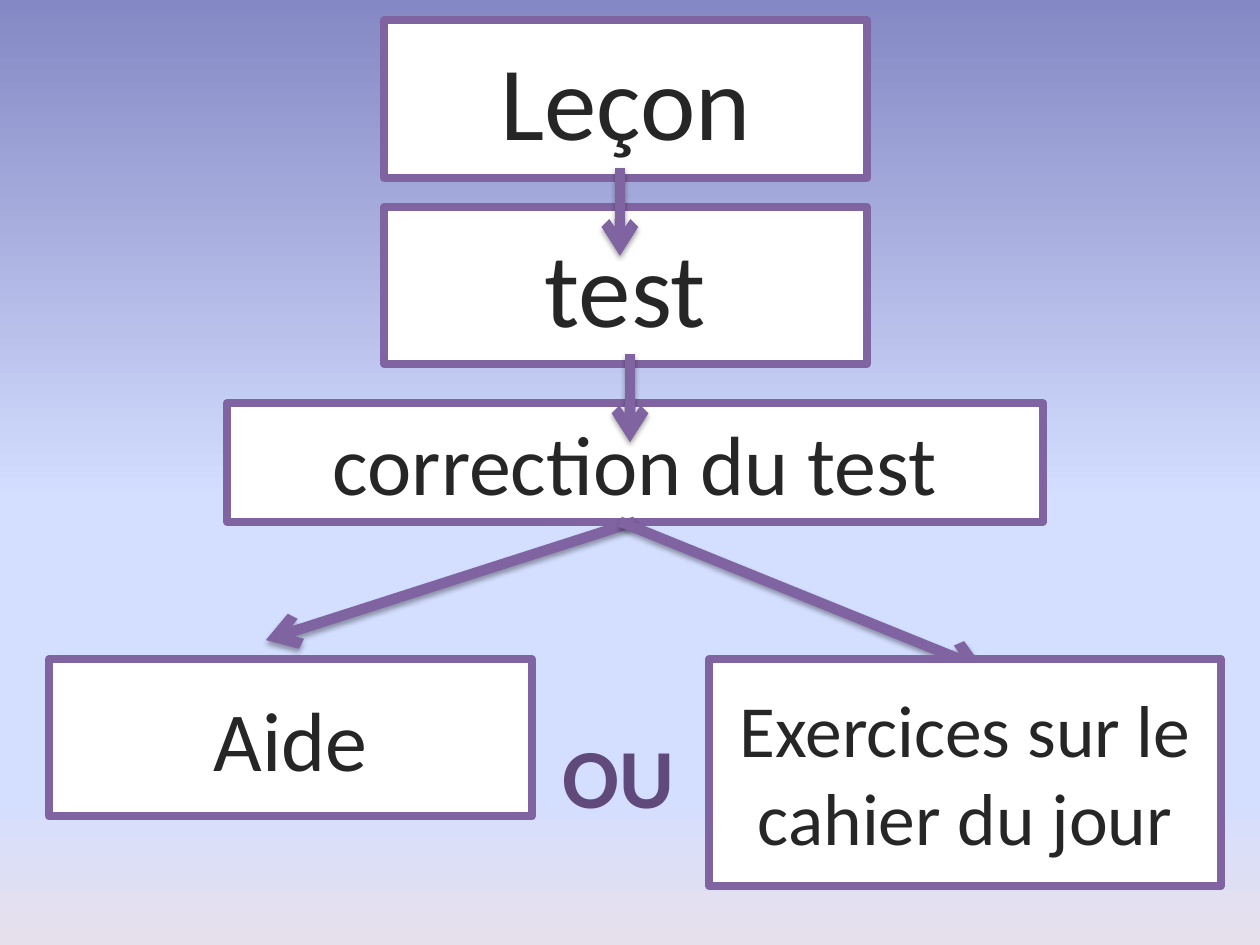
from dataclasses import dataclass

from lxml import etree
from pptx import Presentation
from pptx.dml.color import RGBColor
from pptx.enum.shapes import MSO_CONNECTOR as CONN, MSO_SHAPE as SHAPE
from pptx.enum.text import MSO_ANCHOR as ANCHOR, MSO_AUTO_SIZE as AUTO, PP_ALIGN as ALIGN
from pptx.oxml.ns import qn
from pptx.util import Inches, Pt


@dataclass(frozen=True)
class Theme:
    font: str = "Calibri"
    ink: str = "262626"
    accent: str = "8064A2"
    accent_dark: str = "604A7B"
    paper: str = "FFFFFF"
    shadow: str = "000000"
    sky: tuple = ((0, "8488C4"), (53, "D4DEFF"), (83, "D4DEFF"), (100, "E6E0EC"))
    title: int = 60
    body: int = 48
    small: int = 42
    border: float = 4.5
    arrow: float = 6


T = Theme()
BOTTOM = 2


def rgb(value):
    return RGBColor.from_string(value)


def add_color(parent, value):
    return etree.SubElement(parent, qn("a:srgbClr"), val=value)


def paint_background(s):
    fill = s.background.fill
    fill.gradient()
    fill.gradient_angle = 270
    stops = s.element.find(".//" + qn("a:gsLst"))
    for stop in list(stops):
        stops.remove(stop)
    for pos, color in T.sky:
        add_color(etree.SubElement(stops, qn("a:gs"), pos=str(pos * 1000)), color)


def write(tf, text, align, **font):
    p = tf.paragraphs[0]
    p.alignment = align
    r = p.add_run()
    r.text = text
    color = font.pop("color", T.ink)
    for name, value in {"name": T.font, **font}.items():
        setattr(r.font, name, value)
    r.font.color.rgb = rgb(color)


def add_box(s, x, y, w, h, text, size):
    sp = s.shapes.add_shape(SHAPE.RECTANGLE, *map(Inches, (x, y, w, h)))
    sp.shadow.inherit = False
    sp.fill.solid()
    sp.fill.fore_color.rgb = rgb(T.paper)
    sp.line.color.rgb = rgb(T.accent)
    sp.line.width = Pt(T.border)
    tf = sp.text_frame
    tf.word_wrap = True
    tf.vertical_anchor = ANCHOR.MIDDLE
    write(tf, text, ALIGN.CENTER, size=Pt(size))
    return sp


def add_arrow(s, x1, y1, x2, y2):
    """Arrow with an open head and a soft shadow straight below it."""
    cx = s.shapes.add_connector(CONN.STRAIGHT, *map(Inches, (x1, y1, x2, y2)))
    cx.line.color.rgb = rgb(T.accent)
    cx.line.width = Pt(T.arrow)
    etree.SubElement(cx.line._get_or_add_ln(), qn("a:tailEnd"), type="arrow")
    effects = etree.SubElement(cx._element.spPr, qn("a:effectLst"))
    shadow = etree.SubElement(effects, qn("a:outerShdw"), blurRad=str(Pt(3.1)),
                              dist=str(Pt(1.8)), dir="5400000", rotWithShape="0")
    etree.SubElement(add_color(shadow, T.shadow), qn("a:alpha"), val="35000")
    return cx


def add_steps(s, x, y, w, h):
    """Stack the three steps, with short arrows across the gaps; return the last box."""
    step_w, step_h, pitch = 3.83, 1.25, 1.48
    for i, text in enumerate(("Leçon", "test")):
        add_box(s, x + 1.25, y + i * pitch, step_w, step_h, text, T.title)
    last_h = 0.94
    last = add_box(s, x, y + h - last_h, w, last_h, "correction du test", T.body)
    for i, dx in enumerate((3.12, 3.2)):
        top = y + 1.17 + i * pitch
        add_arrow(s, x + dx, top, x + dx, top + 0.7)
    return last


def add_choice(s, x, y, w, h, source):
    """Fork from the source box to the two alternatives."""
    left_w, right_w, box_y = 3.83, 4.06, y + 1.09
    left = add_arrow(s, x + 4.61, y, x + 1.72, y + 0.94)
    left.begin_connect(source, BOTTOM)
    add_arrow(s, x + 4.53, y, x + 7.42, y + 1.17)
    add_box(s, x, box_y, left_w, 1.25, "Aide", T.body)

    label = s.shapes.add_textbox(*map(Inches, (x + 3.98, y + 1.56, 1.17, 0.91)))
    tf = label.text_frame
    tf.word_wrap = True
    tf.auto_size = AUTO.SHAPE_TO_FIT_TEXT
    write(tf, "OU", ALIGN.LEFT, size=Pt(T.body), bold=True, color=T.accent_dark)

    add_box(s, x + w - right_w, box_y, right_w, y + h - box_y,
            "Exercices sur le cahier du jour", T.small)


def main():
    prs = Presentation()
    prs.slide_width, prs.slide_height = Inches(10), Inches(7.5)
    s = prs.slides.add_slide(prs.slide_layouts[6])
    paint_background(s)
    correction = add_steps(s, 1.8, 0.16, 6.48, 3.98)
    add_choice(s, 0.39, 4.14, 9.3, 2.89, correction)
    prs.save("out.pptx")


if __name__ == "__main__":
    main()
